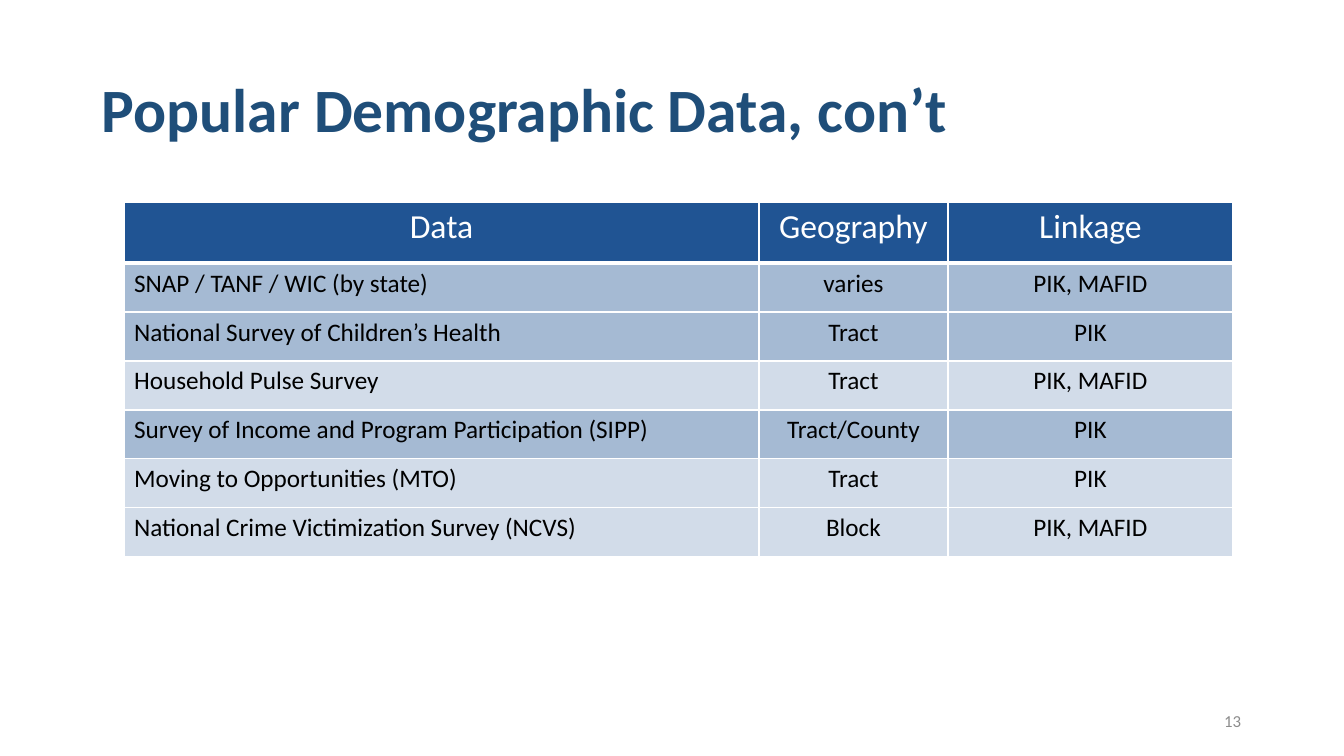
from lxml import etree
from pptx import Presentation
from pptx import util as u
from pptx.dml.color import RGBColor
from pptx.enum import text
from pptx.oxml.ns import qn

EMU_PER_PX = 914400 / 100.8
COLOURS = {"title": "1F4E79", "number": "8C8C8C", "table": "205493",
           "white": "FFFFFF", "black": "000000"}
LEFT, CENTER, RIGHT = text.PP_ALIGN.LEFT, text.PP_ALIGN.CENTER, text.PP_ALIGN.RIGHT

HEADER = ("Data", "Geography", "Linkage")
# Name, geography, linkage, fill opacity in percent
DATASETS = [
    ("SNAP / TANF / WIC (by state)", "varies", "PIK, MAFID", 40),
    ("National Survey of Children’s Health", "Tract", "PIK", 40),
    ("Household Pulse Survey", "Tract", "PIK, MAFID", 20),
    ("Survey of Income and Program Participation (SIPP)", "Tract/County", "PIK", 40),
    ("Moving to Opportunities (MTO)", "Tract", "PIK", 20),
    ("National Crime Victimization Survey (NCVS)", "Block", "PIK, MAFID", 20),
]


def px(length):
    return u.Emu(round(length * EMU_PER_PX))


def colour(name):
    return RGBColor.from_string(COLOURS[name])


class SlideBuilder:
    font = "Calibri"

    def __init__(self, slide):
        self.slide = slide

    def set_text(self, frame, words, size, ink, align=LEFT, bold=False):
        para = frame.paragraphs[0]
        para.text = words
        para.alignment = align
        para.font.name = self.font
        para.font.size = u.Pt(size)
        para.font.bold = bold
        para.font.color.rgb = colour(ink)
        return para

    def text_box(self, area, words, size, ink, **style):
        box = self.slide.shapes.add_textbox(*map(px, area))
        frame = box.text_frame
        frame.word_wrap = True
        frame.vertical_anchor = text.MSO_ANCHOR.MIDDLE
        return self.set_text(frame, words, size, ink, **style)

    def table(self, left, top, widths, heights):
        frame = self.slide.shapes.add_table(
            len(heights), len(widths), px(left), px(top),
            px(sum(widths)), px(sum(heights)))
        table = frame.table
        table.horz_banding = False
        for column, width in zip(table.columns, widths):
            column.width = px(width)
        for row, height in zip(table.rows, heights):
            row.height = px(height)
        return table

    def cell(self, cell, words, size, ink, align, opacity=100, bottom=1):
        """Fill one table cell; bottom is its lower border in points."""
        self.set_text(cell.text_frame, words, size, ink, align)
        properties = cell._tc.get_or_add_tcPr()
        for side, width in (("L", 1), ("R", 1), ("T", 1), ("B", bottom)):
            line = etree.SubElement(properties, qn(f"a:ln{side}"), w=str(u.Pt(width)))
            solid = etree.SubElement(line, qn("a:solidFill"))
            etree.SubElement(solid, qn("a:srgbClr"), val=COLOURS["white"])
        cell.fill.solid()
        cell.fill.fore_color.rgb = colour("table")
        if opacity < 100:
            shade = properties.find(qn("a:solidFill")).find(qn("a:srgbClr"))
            etree.SubElement(shade, qn("a:alpha"), val=str(opacity * 1000))


def main():
    deck = Presentation()
    deck.slide_width, deck.slide_height = px(1344), px(756)
    page = SlideBuilder(deck.slides.add_slide(deck.slide_layouts[6]))

    title = page.text_box((92, 40, 1159, 146), "Popular Demographic Data, con’t",
                          44, "title", bold=True)
    title.line_spacing = 0.9
    page.text_box((949, 701, 302, 40), "13", 12, "number", align=RIGHT)

    table = page.table(124, 202, (635, 189, 285), [61] + [49] * len(DATASETS))
    for column, words in enumerate(HEADER):
        page.cell(table.cell(0, column), words, 24, "white", CENTER, bottom=3)
    for row, (*values, opacity) in enumerate(DATASETS, start=1):
        for column, words in enumerate(values):
            page.cell(table.cell(row, column), words, 18, "black",
                      CENTER if column else LEFT, opacity)

    deck.save("out.pptx")


if __name__ == "__main__":
    main()
